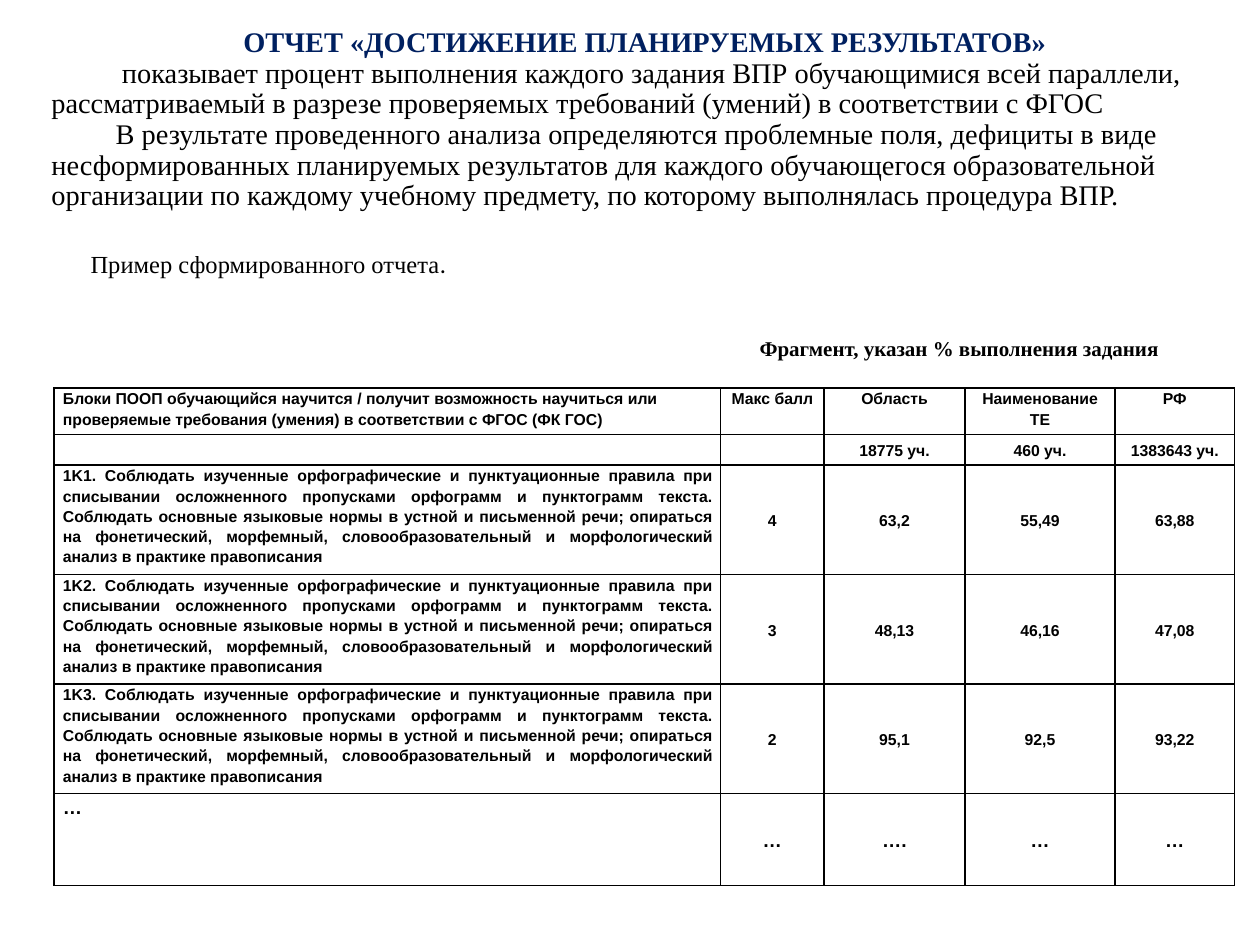
import pptx
import pptx.util
import pptx.dml.color
import pptx.enum.text
import pptx.oxml.ns
from lxml import etree

Inches, Pt = pptx.util.Inches, pptx.util.Pt
ALIGN, ANCHOR = pptx.enum.text.PP_ALIGN, pptx.enum.text.MSO_ANCHOR
BLACK = pptx.dml.color.RGBColor(0, 0, 0)
NAVY = pptx.dml.color.RGBColor(0x00, 0x20, 0x60)
SERIF = "Times New Roman"

# text, first-line indent, alignment, bold, colour
INTRO = [
    ("ОТЧЕТ «ДОСТИЖЕНИЕ ПЛАНИРУЕМЫХ РЕЗУЛЬТАТОВ»", 0.16, ALIGN.CENTER, True, NAVY),
    ("показывает процент выполнения каждого задания ВПР обучающимися всей параллели, "
     "рассматриваемый в разрезе проверяемых требований (умений) в соответствии с ФГОС",
     0.56, ALIGN.LEFT, False, BLACK),
    ("В результате проведенного анализа определяются проблемные поля, дефициты в виде "
     "несформированных планируемых результатов для каждого обучающегося образовательной "
     "организации по каждому учебному предмету, по которому выполнялась процедура ВПР.",
     0.51, ALIGN.LEFT, False, BLACK),
]
EXAMPLE = "Пример сформированного отчета"
CAPTION = "Фрагмент, указан % выполнения задания"

SKILL = (". Соблюдать изученные орфографические и пунктуационные правила при списывании "
         "осложненного пропусками орфограмм и пунктограмм текста. Соблюдать основные "
         "языковые нормы в устной и письменной речи; опираться на фонетический, морфемный, "
         "словообразовательный и морфологический анализ в практике правописания")
ROWS = [
    ("Блоки ПООП обучающийся научится / получит возможность научиться или проверяемые "
     "требования (умения) в соответствии с ФГОС (ФК ГОС)",
     "Макс балл", "Область", "Наименование ТЕ", "РФ"),
    ("", "", "18775 уч.", "460 уч.", "1383643 уч."),
    ("1K1" + SKILL, "4", "63,2", "55,49", "63,88"),
    ("1K2" + SKILL, "3", "48,13", "46,16", "47,08"),
    ("1K3" + SKILL, "2", "95,1", "92,5", "93,22"),
    ("…", "…", "….", "…", "…"),
]
COLUMN_WIDTHS = [5.29, 0.82, 1.12, 1.19, 0.95]
ROW_HEIGHTS = [0.37, 0.24, 0.87, 0.87, 0.87, 0.73]


def style(para, size, font=SERIF, bold=False, color=BLACK):
    para.font.size, para.font.name = Pt(size), font
    para.font.bold, para.font.color.rgb = bold, color


def indent_first_line(para, inches):
    para._p.get_or_add_pPr().set("indent", str(Inches(inches)))


def add_box(page, *place):
    frame = page.shapes.add_textbox(*map(Inches, place)).text_frame
    frame.word_wrap = True
    return frame


def add_intro(page):
    frame = add_box(page, 0.31, 0.22, 9.45, 1.5)
    frame.margin_top = frame.margin_bottom = 0
    for index, (text, indent, align, bold, color) in enumerate(INTRO):
        para = frame.add_paragraph() if index else frame.paragraphs[0]
        para.text, para.alignment = text, align
        para.line_spacing = Pt(17.5)
        indent_first_line(para, indent)
        style(para, 16.2, bold=bold, color=color)


def add_labels(page):
    para = add_box(page, 0.62, 1.93, 9.38, 0.34).paragraphs[0]
    para.text = EXAMPLE
    style(para, 14)
    span = para.add_run()
    span.text, span.font.name = ".", "Calibri"

    frame = add_box(page, 5.44, 2.61, 4.56, 0.3)
    frame.vertical_anchor = ANCHOR.MIDDLE
    para = frame.paragraphs[0]
    para.text, para.alignment = CAPTION, ALIGN.JUSTIFY
    indent_first_line(para, 0.49)
    style(para, 12, bold=True)


def add_borders(cell):
    properties = cell._tc.get_or_add_tcPr()
    qn = pptx.oxml.ns.qn
    for side in "LRTB":
        line = etree.SubElement(properties, qn("a:ln" + side), w=str(Pt(1)))
        fill = etree.SubElement(line, qn("a:solidFill"))
        etree.SubElement(fill, qn("a:srgbClr"), val=str(BLACK))


def fill_cell(cell, text, row, column):
    cell.margin_left = cell.margin_right = Inches(0.07)
    cell.margin_top = cell.margin_bottom = 0
    add_borders(cell)
    cell.fill.background()
    if row and column:
        cell.vertical_anchor = ANCHOR.MIDDLE
    para = cell.text_frame.paragraphs[0]
    para.text, para.line_spacing = text, 1.15
    para.alignment = ALIGN.CENTER if column else ALIGN.JUSTIFY if row else ALIGN.LEFT
    size = 11 if row == len(ROWS) - 1 else 9
    style(para, size, "Arial", True)
    if not text:  # keeps an empty cell from stretching its row
        para._p.get_or_add_endParaRPr().set("sz", str(size * 100))


def add_report(page):
    table = page.shapes.add_table(
        len(ROWS), len(COLUMN_WIDTHS), Inches(0.43), Inches(3.08),
        Inches(sum(COLUMN_WIDTHS)), Inches(sum(ROW_HEIGHTS))).table
    table.first_row = table.horz_banding = False
    for column, width in zip(table.columns, COLUMN_WIDTHS):
        column.width = Inches(width)
    for row, height in zip(table.rows, ROW_HEIGHTS):
        row.height = Inches(height)
    for row, texts in enumerate(ROWS):
        for column, text in enumerate(texts):
            fill_cell(table.cell(row, column), text, row, column)


def main():
    deck = pptx.Presentation()
    deck.slide_width, deck.slide_height = Inches(10), Inches(7.5)
    page = deck.slides.add_slide(deck.slide_layouts[6])
    add_intro(page)
    add_labels(page)
    add_report(page)
    deck.save("out.pptx")


if __name__ == "__main__":
    main()
